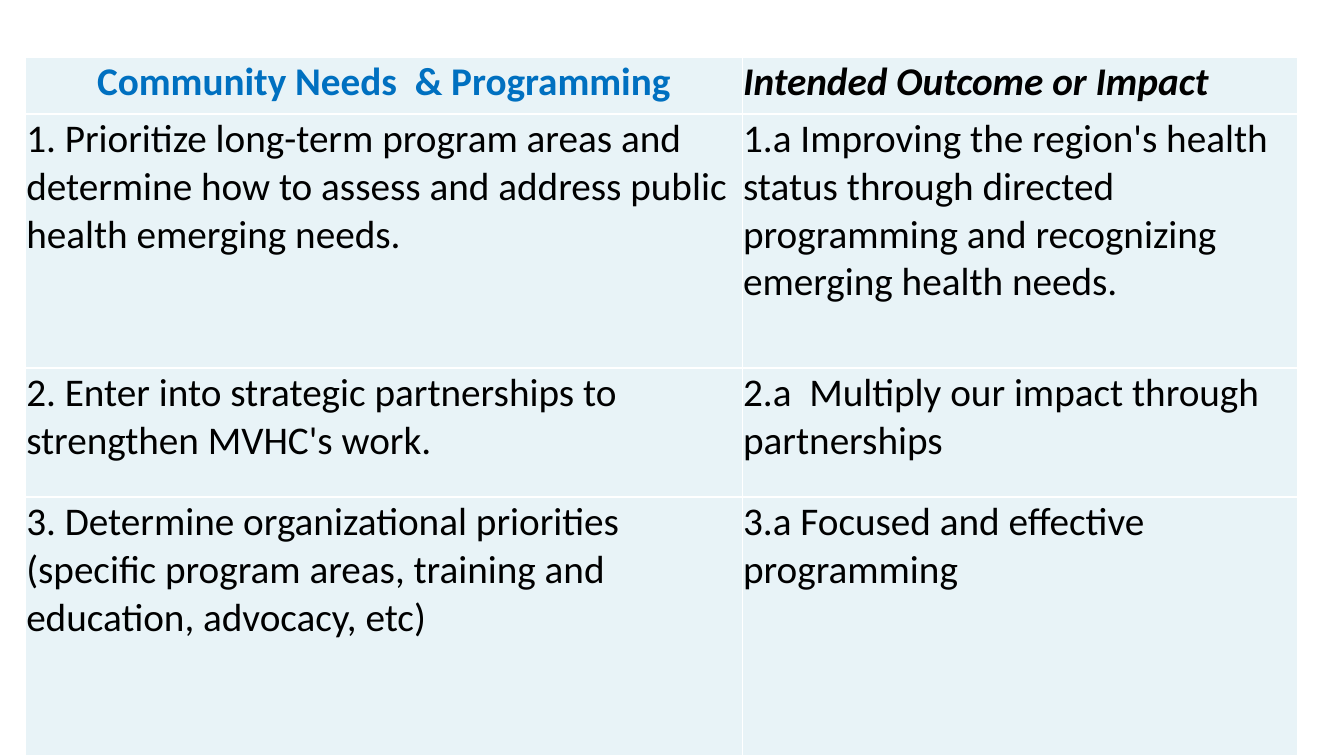
from lxml import etree
from pptx import Presentation, util as u
from pptx.dml.color import RGBColor
from pptx.enum import text
from pptx.oxml.ns import qn

ROWS = [
    ("Community Needs  & Programming", "Intended Outcome or Impact"),
    ("1. Prioritize long-term program areas and determine how to assess and "
     "address public health emerging needs.",
     "1.a Improving the region's health status through directed programming "
     "and recognizing emerging health needs."),
    ("2. Enter into strategic partnerships to strengthen MVHC's work.",
     "2.a  Multiply our impact through partnerships"),
    ("3. Determine organizational priorities (specific program areas, "
     "training and education, advocacy, etc)",
     "3.a Focused and effective programming"),
]
# Column widths and row heights, in percent of the slide
COL_SHARES = [53.34, 41.34]
ROW_SHARES = [7.47, 33.6, 17.07, 34.26]


def rgb(value):
    return RGBColor.from_string(value)


class Deck:
    font = {"name": "Calibri", "size": u.Pt(28), "bold": False, "italic": False}
    margins = {"margin_left": u.Inches(0.01), "margin_right": u.Inches(0.01),
               "margin_top": u.Inches(0.01), "margin_bottom": 0}
    ink, accent, band, rule = "000000", "0070C0", "E8F3F7", "FFFFFF"

    def __init__(self):
        self.prs = Presentation()
        self.prs.slide_width, self.prs.slide_height = u.Inches(13.33), u.Inches(7.5)
        self.s = self.prs.slides.add_slide(self.prs.slide_layouts[6])

    def x(self, share):
        return round(self.prs.slide_width * share / 100)

    def y(self, share):
        return round(self.prs.slide_height * share / 100)

    def table(self, left, top, cols, rows):
        frame = self.s.shapes.add_table(
            len(rows), len(cols), self.x(left), self.y(top),
            self.x(sum(cols)), self.y(sum(rows)))
        table = frame.table
        table.horz_banding = False
        for col, share in zip(table.columns, cols):
            col.width = self.x(share)
        for row, share in zip(table.rows, rows):
            row.height = self.y(share)
        return table

    def cell(self, cell, wording, color=None, align=text.PP_ALIGN.LEFT, **font):
        for name, value in self.margins.items():
            setattr(cell, name, value)
        self.borders(cell)
        cell.fill.solid()
        cell.fill.fore_color.rgb = rgb(self.band)
        p = cell.text_frame.paragraphs[0]
        p.alignment = align
        r = p.add_run()
        r.text = wording
        for name, value in {**self.font, **font}.items():
            setattr(r.font, name, value)
        r.font.color.rgb = rgb(color or self.ink)

    def borders(self, cell):
        props = cell._tc.get_or_add_tcPr()
        for side in ("a:lnL", "a:lnR", "a:lnT", "a:lnB"):
            line = etree.SubElement(props, qn(side), w=str(u.Pt(1)))
            fill = etree.SubElement(line, qn("a:solidFill"))
            etree.SubElement(fill, qn("a:srgbClr"), val=self.rule)


def main():
    deck = Deck()
    table = deck.table(1.88, 7.6, COL_SHARES, ROW_SHARES)

    # Header row
    needs, outcome = ROWS[0]
    deck.cell(table.cell(0, 0), needs, deck.accent, text.PP_ALIGN.CENTER, bold=True)
    deck.cell(table.cell(0, 1), outcome, bold=True, italic=True)

    # Needs and their outcomes
    for i, row in enumerate(ROWS[1:], 1):
        for j, wording in enumerate(row):
            deck.cell(table.cell(i, j), wording)

    deck.prs.save("out.pptx")


if __name__ == "__main__":
    main()
